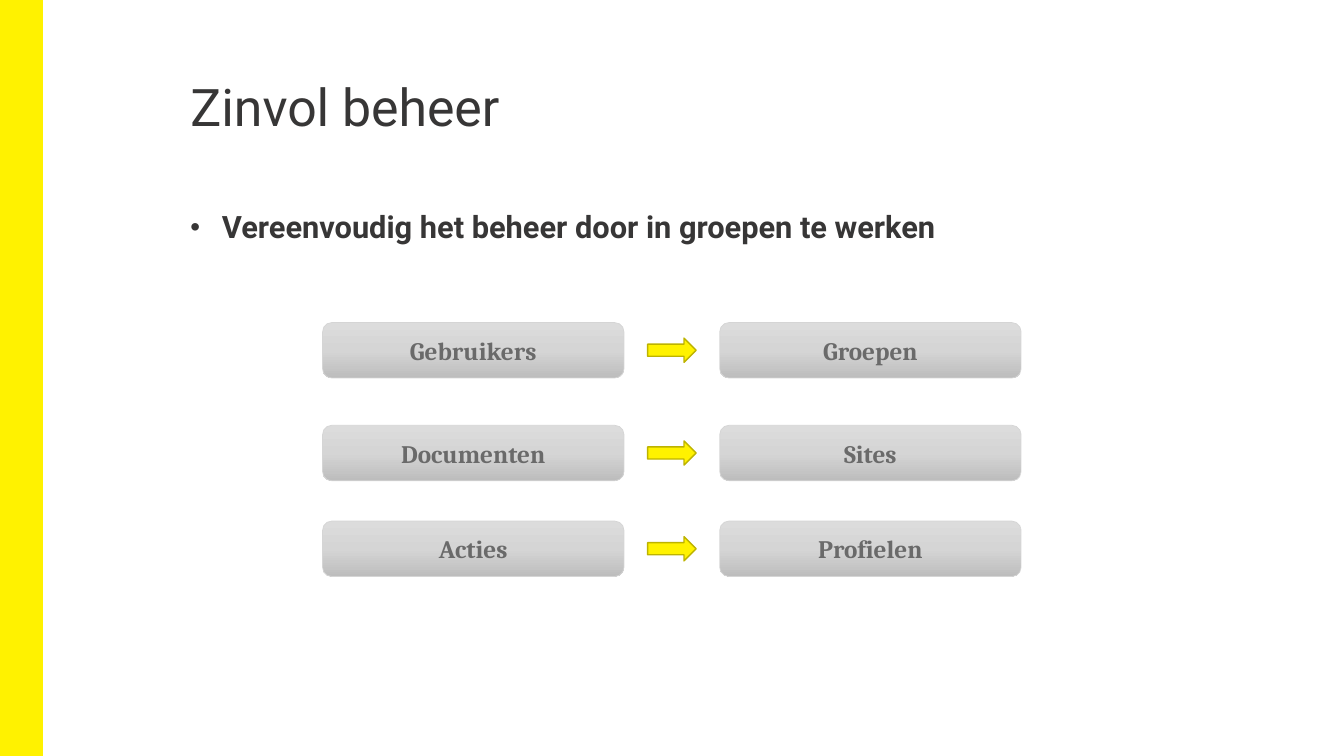
import copy

import pptx
import pptx.dml.color
import pptx.enum.shapes
import pptx.enum.text
import pptx.oxml
import pptx.oxml.ns
import pptx.util

Pt = pptx.util.Pt
SHAPES = pptx.enum.shapes.MSO_SHAPE
ALIGN = pptx.enum.text.PP_ALIGN
ANCHOR = pptx.enum.text.MSO_ANCHOR

YELLOW, DARK_YELLOW = "FFF200", "BDB300"
DARK_TEXT, BOX_TEXT = "373636", "6A6A6A"
BOX_GRADIENT = ((0, "DCDCDC"), (0.5, "D5D5D5"), (1, "BDBDBD"))
BOX_LINE = "D5D5D5"

SLIDE_WIDTH, SLIDE_HEIGHT = 960, 540
BOX_WIDTH, BOX_HEIGHT = 215.3, 39.6
LEFT_COLUMN, RIGHT_COLUMN = 230.4, 514.1
ARROW_WIDTH, ARROW_HEIGHT = 34.6, 17.3
ROWS = (
    (230.4, "Gebruikers", "Groepen"),
    (303.8, "Documenten", "Sites"),
    (372.2, "Acties", "Profielen"),
)


def color(hex_value):
    return pptx.dml.color.RGBColor.from_string(hex_value)


def place(shape, left, top, width, height):
    shape.left, shape.top = Pt(left), Pt(top)
    shape.width, shape.height = Pt(width), Pt(height)


def write_text(shape, text, *, size, font, fill, bold=False, align=ALIGN.LEFT,
               anchor=ANCHOR.TOP, line_spacing=None, margins=None):
    frame = shape.text_frame
    frame.word_wrap = True
    frame.auto_size = pptx.enum.text.MSO_AUTO_SIZE.NONE
    frame.vertical_anchor = anchor
    if margins:
        (frame.margin_left, frame.margin_top,
         frame.margin_right, frame.margin_bottom) = map(Pt, margins)
    paragraph = frame.paragraphs[0]
    paragraph.alignment = align
    paragraph.space_before = Pt(0)
    paragraph.line_spacing = line_spacing
    run = paragraph.add_run()
    run.text = text
    run.font.size = Pt(size)
    run.font.name = font
    run.font.bold = bold
    run.font.color.rgb = color(fill)


def add_bullet(paragraph, indent, size_percent):
    properties = paragraph._p.get_or_add_pPr()
    properties.set("marL", str(Pt(indent)))
    properties.set("indent", str(-Pt(indent)))
    namespace = pptx.oxml.ns.nsdecls("a")
    for markup in (f'<a:buSzPct {namespace} val="{size_percent * 1000}"/>',
                   f'<a:buFont {namespace} typeface="Arial"/>',
                   f'<a:buChar {namespace} char="•"/>'):
        properties.append(pptx.oxml.parse_xml(markup))


def add_shape(slide, kind, left, top, width, height, line, line_width, fill=None):
    shape = slide.shapes.add_shape(kind, Pt(left), Pt(top), Pt(width), Pt(height))
    shape.shadow.inherit = False
    shape.line.color.rgb = color(line)
    shape.line.width = Pt(line_width)
    if fill:
        shape.fill.solid()
        shape.fill.fore_color.rgb = color(fill)
    return shape


def fill_gradient(shape, stops):
    shape.fill.gradient()
    shape.fill.gradient_angle = 270
    # The default gradient has two stops; add the middle one
    stop_list = shape._element.spPr.find(".//" + pptx.oxml.ns.qn("a:gsLst"))
    stop_list.insert(1, copy.deepcopy(stop_list[0]))
    for stop, (position, hex_value) in zip(shape.fill.gradient_stops, stops):
        stop.position = position
        stop.color.rgb = color(hex_value)


def add_box(slide, left, top, text):
    box = add_shape(slide, SHAPES.ROUNDED_RECTANGLE, left, top,
                    BOX_WIDTH, BOX_HEIGHT, BOX_LINE, 0.5)
    fill_gradient(box, BOX_GRADIENT)
    write_text(box, text, size=18, font="Cambria", fill=BOX_TEXT, bold=True,
               align=ALIGN.CENTER, anchor=ANCHOR.MIDDLE)


def add_arrow(slide, box_top):
    left = (LEFT_COLUMN + BOX_WIDTH + RIGHT_COLUMN - ARROW_WIDTH) / 2
    top = box_top + (BOX_HEIGHT - ARROW_HEIGHT) / 2
    add_shape(slide, SHAPES.RIGHT_ARROW, left, top, ARROW_WIDTH, ARROW_HEIGHT,
              DARK_YELLOW, 1, YELLOW)


def main():
    presentation = pptx.Presentation()
    presentation.slide_width = Pt(SLIDE_WIDTH)
    presentation.slide_height = Pt(SLIDE_HEIGHT)
    slide = presentation.slides.add_slide(presentation.slide_layouts[1])

    # Side bar
    add_shape(slide, SHAPES.RECTANGLE, 0, 0, 30.2, SLIDE_HEIGHT, YELLOW, 1, YELLOW)

    # Title and list
    title, body = slide.shapes.title, slide.placeholders[1]
    place(title, 136, 60, 778, 88)
    write_text(title, "Zinvol beheer", size=37, font="Roboto", fill=DARK_TEXT,
               line_spacing=Pt(38), margins=(0, 0, 0, 0))
    place(body, 136, 151.2, 778, 289.4)
    write_text(body, "Vereenvoudig het beheer door in groepen te werken",
               size=22, font="Roboto", fill=DARK_TEXT, bold=True,
               line_spacing=0.9, margins=(0, 0, 0, 3.6))
    add_bullet(body.text_frame.paragraphs[0], 22.5, 90)

    # Rows of boxes joined by arrows
    for top, source, target in ROWS:
        add_box(slide, LEFT_COLUMN, top, source)
        add_box(slide, RIGHT_COLUMN, top, target)
        add_arrow(slide, top)

    presentation.save("out.pptx")


if __name__ == "__main__":
    main()
